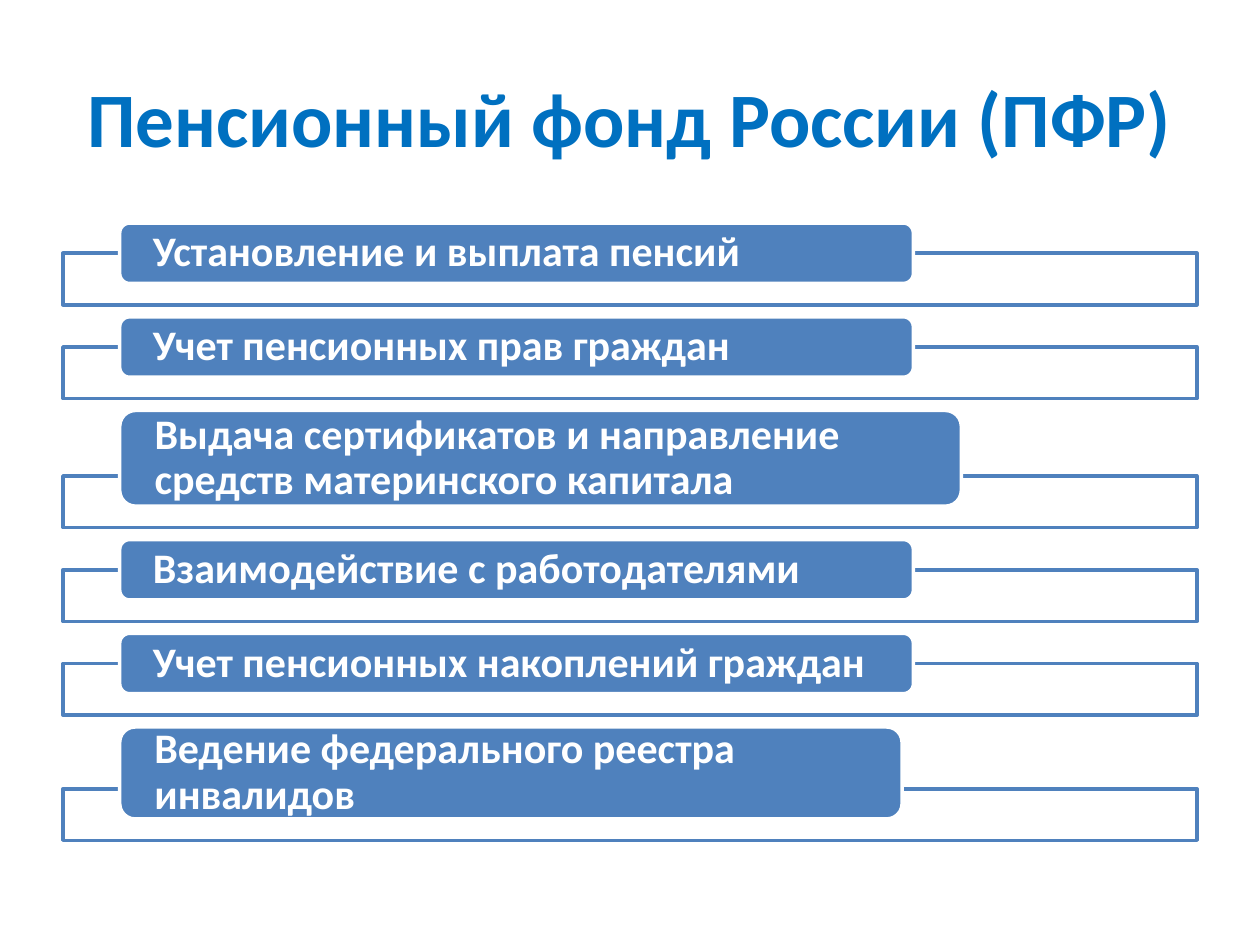
from dataclasses import dataclass
from typing import Any

from lxml.etree import SubElement
from pptx import Presentation
from pptx.dml.color import RGBColor
from pptx.enum.shapes import MSO_SHAPE
from pptx.enum.text import MSO_ANCHOR, PP_ALIGN
from pptx.oxml.ns import qn
from pptx.util import Inches, Pt


@dataclass(frozen=True)
class Theme:
    font: str = "Calibri"
    title_color: RGBColor = RGBColor(0x00, 0x70, 0xC0)
    accent: RGBColor = RGBColor(0x4F, 0x81, 0xBD)
    white: RGBColor = RGBColor(0xFF, 0xFF, 0xFF)
    title_size: int = 44
    label_size: int = 24
    line_width: int = 2
    frame_opacity: int = 90


@dataclass(frozen=True)
class Duty:
    text: str
    width: float = 6.3
    height: float = 0.48


THEME = Theme()
DUTIES = [
    Duty("Установление и выплата пенсий"),
    Duty("Учет пенсионных прав граждан"),
    Duty("Выдача сертификатов и направление средств материнского капитала", 6.68, 0.76),
    Duty("Взаимодействие с работодателями"),
    Duty("Учет пенсионных накоплений граждан"),
    Duty("Ведение федерального реестра инвалидов", 6.21, 0.73),
]
FRAME_LEFT, FRAME_WIDTH, FRAME_HEIGHT = 0.5, 9, 0.41
TAB_LEFT, TAB_INSET, TAB_OVERLAP = 0.95, 0.24, 0.24
LIST_TOP, LIST_BOTTOM = 1.77, 6.67


def apply_format(target: Any, values: dict[str, Any]) -> None:
    for name, value in values.items():
        setattr(target, name, value)


def write_text(shape: Any, text: str, size: int, color: RGBColor,
               paragraph_format: dict[str, Any], frame_format: dict[str, Any]) -> None:
    text_frame = shape.text_frame
    text_frame.text = text
    apply_format(text_frame, {"word_wrap": True, "vertical_anchor": MSO_ANCHOR.MIDDLE} | frame_format)
    paragraph = text_frame.paragraphs[0]
    apply_format(paragraph, paragraph_format)
    font = paragraph.runs[0].font
    apply_format(font, {"name": THEME.font, "size": Pt(size), "bold": True})
    font.color.rgb = color


def add_box(slide: Any, kind: MSO_SHAPE, left: float, top: float, width: float, height: float,
            fill: RGBColor, line: RGBColor) -> Any:
    shape = slide.shapes.add_shape(kind, Inches(left), Inches(top), Inches(width), Inches(height))
    shape.shadow.inherit = False
    shape.fill.solid()
    shape.fill.fore_color.rgb = fill
    shape.line.color.rgb = line
    shape.line.width = Pt(THEME.line_width)
    return shape


def add_duty(slide: Any, duty: Duty, top: float) -> float:
    frame_top = top + duty.height - TAB_OVERLAP
    frame = add_box(slide, MSO_SHAPE.RECTANGLE, FRAME_LEFT, frame_top, FRAME_WIDTH, FRAME_HEIGHT,
                    THEME.white, THEME.accent)
    fill_color = frame.element.spPr.find(qn("a:solidFill"))[0]
    SubElement(fill_color, qn("a:alpha"), val=str(THEME.frame_opacity * 1000))
    tab = add_box(slide, MSO_SHAPE.ROUNDED_RECTANGLE, TAB_LEFT, top, duty.width, duty.height,
                  THEME.accent, THEME.white)
    write_text(tab, duty.text, THEME.label_size, THEME.white,
               {"alignment": PP_ALIGN.LEFT, "line_spacing": 0.9},
               {"margin_left": Inches(TAB_INSET), "margin_right": Inches(TAB_INSET),
                "margin_top": 0, "margin_bottom": 0})
    return frame_top + FRAME_HEIGHT


def main() -> None:
    presentation = Presentation()
    apply_format(presentation, {"slide_width": Inches(10), "slide_height": Inches(7.5)})
    slide = presentation.slides.add_slide(presentation.slide_layouts[5])
    title = slide.shapes.title
    apply_format(title, {"left": Inches(0.5), "top": Inches(0.3),
                         "width": Inches(9), "height": Inches(1.25)})
    write_text(title, "Пенсионный фонд России (ПФР)", THEME.title_size, THEME.title_color,
               {"alignment": PP_ALIGN.CENTER}, {})
    content_height = sum(duty.height + FRAME_HEIGHT - TAB_OVERLAP for duty in DUTIES)
    gap = (LIST_BOTTOM - LIST_TOP - content_height) / (len(DUTIES) - 1)
    top = LIST_TOP
    for duty in DUTIES:
        top = add_duty(slide, duty, top) + gap
    presentation.save("out.pptx")


if __name__ == "__main__":
    main()
